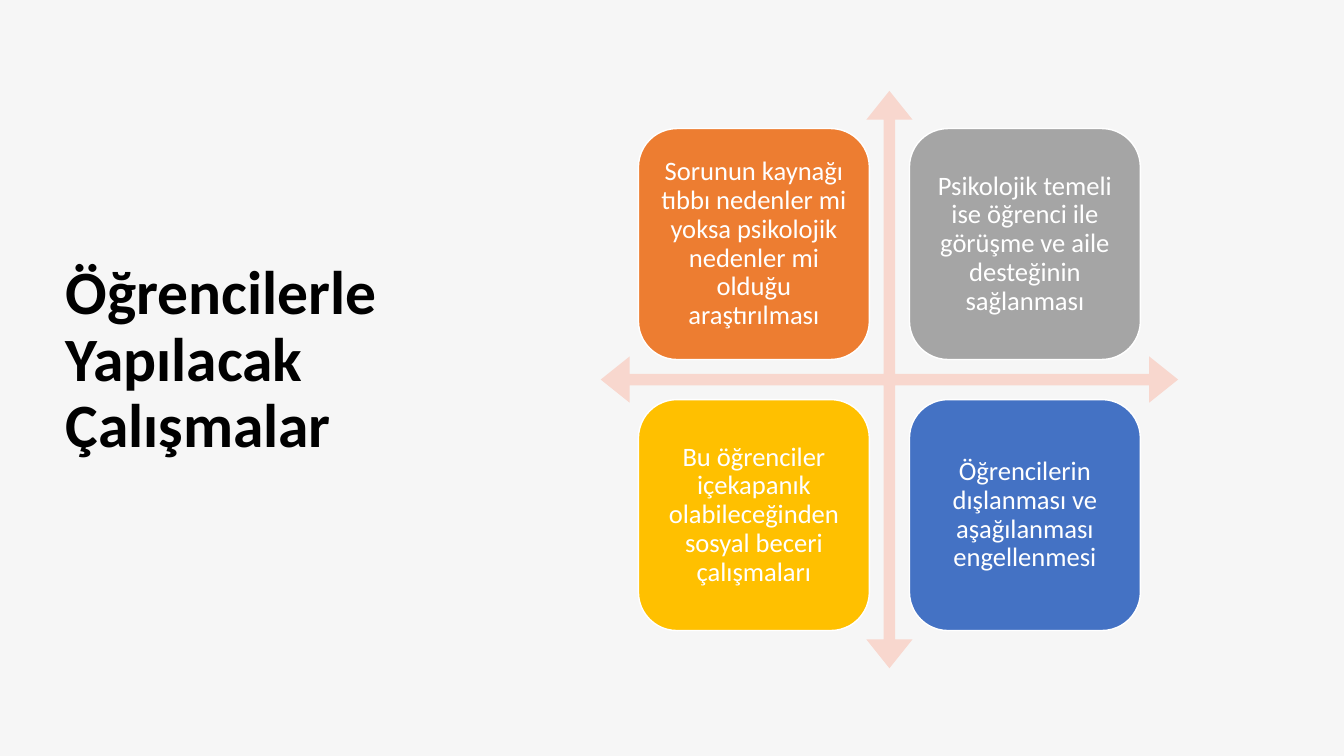
import pptx
import pptx.dml.color
import pptx.enum.shapes
import pptx.enum.text
import pptx.util

Cm = pptx.util.Cm
Pt = pptx.util.Pt
SHAPES = pptx.enum.shapes.MSO_SHAPE
ALIGN = pptx.enum.text.PP_ALIGN

COLORS = {
    "background": "F6F6F6",
    "title": "000000",
    "axes": "F8D7CE",
    "white": "FFFFFF",
    "orange": "ED7D31",
    "gray": "A5A5A5",
    "yellow": "FFC000",
    "blue": "4472C4",
}

STEPS = [
    ("Sorunun kaynağı tıbbı nedenler mi yoksa psikolojik nedenler mi olduğu araştırılması", "orange"),
    ("Psikolojik temeli ise öğrenci ile görüşme ve aile desteğinin sağlanması", "gray"),
    ("Bu öğrenciler içekapanık olabileceğinden sosyal beceri çalışmaları", "yellow"),
    ("Öğrencilerin dışlanması ve aşağılanması engellenmesi", "blue"),
]

# Matrix geometry in centimetres
MATRIX_LEFT, MATRIX_TOP, MATRIX_SIZE = 15.14, 2.29, 14.55
TILE_SIZE, TILE_MARGIN = 5.82, 0.95
TILE_PITCH = MATRIX_SIZE - 2 * TILE_MARGIN - TILE_SIZE


class MatrixSlide:
    font_name = "Calibri"
    line_spacing = 0.9

    def __init__(self, slide):
        self.slide = slide
        self.paint(slide.background.fill, "background")

    def paint(self, fill, color):
        fill.solid()
        fill.fore_color.rgb = self.rgb(color)

    def rgb(self, color):
        return pptx.dml.color.RGBColor.from_string(COLORS[color])

    def set_text(self, frame, text, size, color, align, bold=False):
        frame.word_wrap = True
        frame.vertical_anchor = pptx.enum.text.MSO_ANCHOR.MIDDLE
        paragraph = frame.paragraphs[0]
        paragraph.text = text
        paragraph.alignment = align
        paragraph.line_spacing = self.line_spacing
        paragraph.font.name = self.font_name
        paragraph.font.size = Pt(size)
        paragraph.font.bold = bold
        paragraph.font.color.rgb = self.rgb(color)

    def title(self, text, left, top, width, height):
        heading = self.slide.shapes.add_textbox(Cm(left), Cm(top), Cm(width), Cm(height))
        self.set_text(heading.text_frame, text, 44, "title", ALIGN.LEFT, bold=True)

    def shape(self, kind, left, top, size, color):
        """Add a square-framed preset shape without outline or shadow."""
        shape = self.slide.shapes.add_shape(kind, Cm(left), Cm(top), Cm(size), Cm(size))
        shape.shadow.inherit = False
        shape.line.fill.background()
        self.paint(shape.fill, color)
        return shape

    def axes(self, left, top, size):
        cross = self.shape(SHAPES.QUAD_ARROW, left, top, size, "axes")
        for index, ratio in enumerate((0.02, 0.04, 0.05)):
            cross.adjustments[index] = ratio

    def tile(self, text, left, top, size, color):
        tile = self.shape(SHAPES.ROUNDED_RECTANGLE, left, top, size, color)
        self.paint(tile.line.fill, "white")
        tile.line.width = Pt(1)
        frame = tile.text_frame
        frame.margin_left = frame.margin_right = Cm(0.2)
        frame.margin_top = frame.margin_bottom = Cm(0.2)
        self.set_text(frame, text, 19, "white", ALIGN.CENTER)


def main():
    deck = pptx.Presentation()
    deck.slide_width, deck.slide_height = Cm(33.87), Cm(19.05)
    page = MatrixSlide(deck.slides.add_slide(deck.slide_layouts[6]))

    page.title("Öğrencilerle Yapılacak Çalışmalar", 1.4, 1.88, 10.03, 14.45)
    page.axes(MATRIX_LEFT, MATRIX_TOP, MATRIX_SIZE)
    for index, (step, color) in enumerate(STEPS):
        row, column = divmod(index, 2)
        left = MATRIX_LEFT + TILE_MARGIN + column * TILE_PITCH
        top = MATRIX_TOP + TILE_MARGIN + row * TILE_PITCH
        page.tile(step, left, top, TILE_SIZE, color)

    deck.save("out.pptx")


if __name__ == "__main__":
    main()
